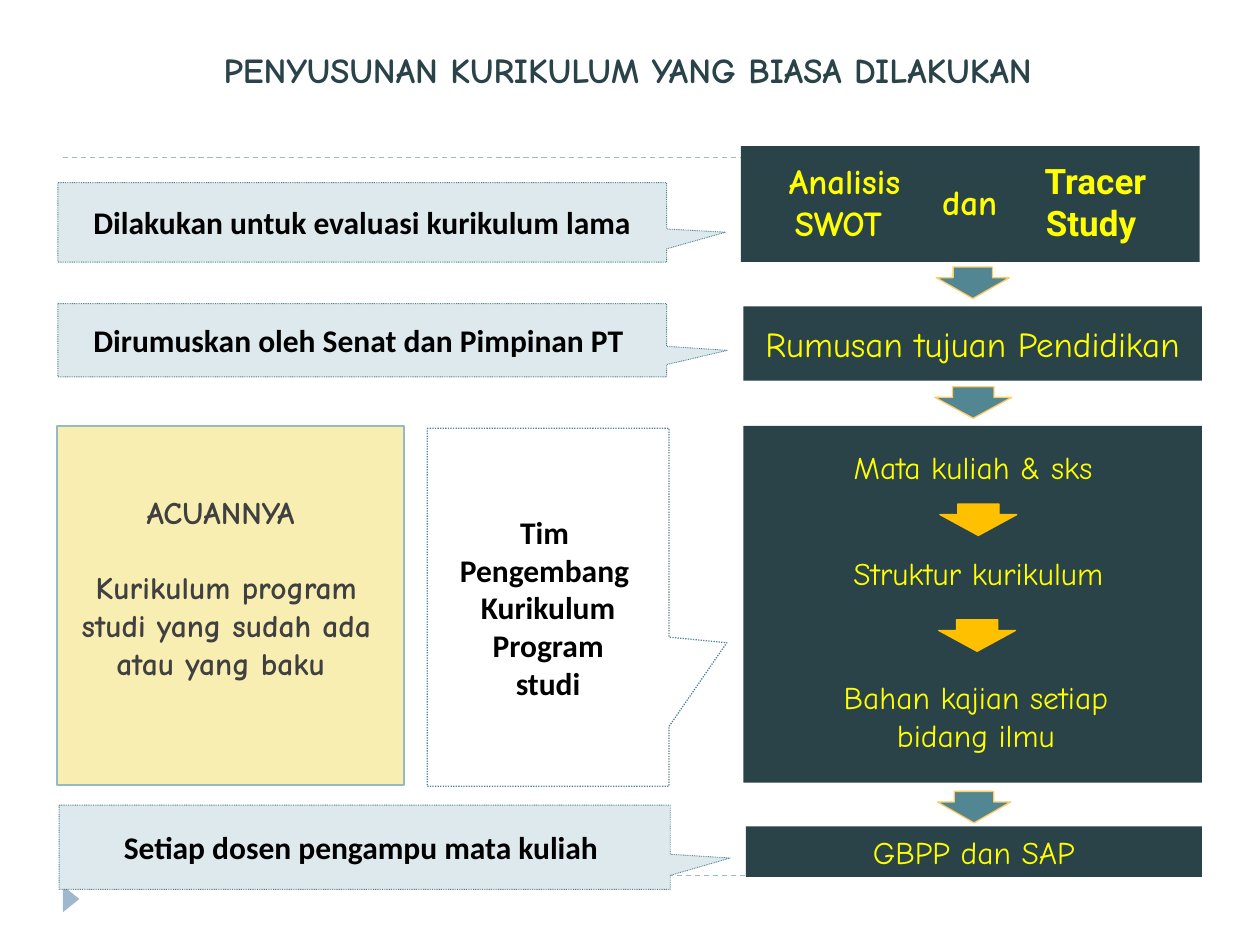
from lxml.etree import SubElement
from pptx import Presentation
from pptx.dml.color import RGBColor
from pptx.enum.dml import MSO_LINE
from pptx.enum.shapes import MSO_CONNECTOR, MSO_SHAPE
from pptx.enum.text import MSO_ANCHOR, PP_ALIGN
from pptx.oxml.ns import qn
from pptx.util import Pt

DARK, TEAL, PALE = "294349", "528693", "DDE9EC"
YELLOW, GOLD, AMBER, BLUE = "FFFF00", "FFCC66", "FFC000", "9FB8CD"
COMIC, CALIBRI, ROBOTO = "Comic Neue", "Calibri", "Roboto"


def color(value):
    return RGBColor.from_string(value)


class Board:
    """The current slide and its style; every length is in points."""

    def __init__(self, page):
        self.page = page

    def label(self, box, lines, size=18, font=COMIC, ink=YELLOW, bold=False,
              anchor=MSO_ANCHOR.TOP, wrap=True, gap=0):
        frame = box.text_frame
        frame.word_wrap, frame.vertical_anchor = wrap, anchor
        for index, line in enumerate(lines):
            para = frame.add_paragraph() if index else frame.paragraphs[0]
            para.alignment = PP_ALIGN.CENTER
            para.space_before = Pt(gap if index else 0)
            span = para.add_run()
            span.text = line
            values = {"size": Pt(size), "name": font, "bold": bold}
            for name, value in values.items():
                setattr(span.font, name, value)
            span.font.color.rgb = color(ink)

    def title(self, place, text, **style):
        box = self.page.shapes.title
        for name, value in zip(("left", "top", "width", "height"), place):
            setattr(box, name, Pt(value))
        self.label(box, [text], anchor=MSO_ANCHOR.MIDDLE, **style)

    def text(self, place, *lines, **style):
        self.label(self.page.shapes.add_textbox(*map(Pt, place)), lines, **style)

    def shape(self, kind, place, fill=None, line=None, weight=0.75, dash=None,
              adjust=()):
        box = self.page.shapes.add_shape(kind, *map(Pt, place))
        box.shadow.inherit = False
        if fill:
            box.fill.solid()
            box.fill.fore_color.rgb = color(fill)
        else:
            box.fill.background()
        if line:
            box.line.color.rgb = color(line)
            box.line.width = Pt(weight)
            box.line.dash_style = dash
        else:
            box.line.fill.background()
        for index, value in enumerate(adjust):
            box.adjustments[index] = value
        return box

    def panel(self, place, *lines, **style):
        box = self.shape(MSO_SHAPE.RECTANGLE, place, DARK)
        if lines:
            self.label(box, lines, **style)

    def callout(self, place, tip, *lines, fill=PALE, weight=0.5):
        box = self.shape(MSO_SHAPE.RECTANGULAR_CALLOUT, place, fill, TEAL, weight,
                         MSO_LINE.ROUND_DOT, tip)
        self.label(box, lines, font=CALIBRI, ink="000000", bold=True,
                   anchor=MSO_ANCHOR.MIDDLE)

    def arrow(self, left, top, width=41.8, fill=TEAL, line=GOLD):
        self.shape(MSO_SHAPE.DOWN_ARROW, (left, top, width, 18), fill, line,
                   adjust=(0.538, 0.662))

    def rule(self, top):
        line = self.page.shapes.add_connector(
            MSO_CONNECTOR.STRAIGHT, Pt(36), Pt(top), Pt(684), Pt(top))
        line.line.color.rgb = color(BLUE)
        line.line.width = Pt(0.75)
        line.line.dash_style = MSO_LINE.DASH
        SubElement(line.element.spPr, qn("a:effectLst"))


def main():
    deck = Presentation()
    deck.slide_width, deck.slide_height = Pt(720), Pt(540)
    board = Board(deck.slides.add_slide(deck.slide_layouts[5]))

    # Background rules and corner marker
    for top in (500.4, 90):
        board.rule(top)
    marker = board.shape(MSO_SHAPE.ISOSCELES_TRIANGLE, (33.1, 509, 15.1, 9.4), BLUE)
    marker.rotation = 90

    board.title((22.3, 23.8, 673.2, 31.7), "PENYUSUNAN KURIKULUM YANG BIASA DILAKUKAN",
                size=20, ink=DARK, bold=True)

    # Reference box
    board.shape(MSO_SHAPE.RECTANGLE, (32.4, 243.4, 198.7, 205.2), "F8EEB2", "94BAC3", 1)
    board.text((38.2, 277.9, 182.2, 138.2), "ACUANNYA ",
               "Kurikulum program studi yang sudah ada atau yang baku ",
               ink="404040", bold=True, gap=21.8)

    # Who does each step
    board.callout((33.1, 104.4, 347.8, 45.4), (0.597, 0.124),
                  "Dilakukan untuk evaluasi kurikulum lama")
    board.callout((33.1, 173.5, 347.8, 41.8), (0.6, 0.139),
                  "Dirumuskan oleh Senat dan Pimpinan PT ")
    board.callout((244.1, 244.8, 138.2, 204.5), (0.739, 0.099), "Tim ", "Pengembang ",
                  "Kurikulum", "Program", "studi", fill=None, weight=0.75)
    board.callout((33.8, 460.1, 349.2, 48.2), (0.598, 0.128),
                  "Setiap dosen pengampu mata kuliah ")

    # Step 1: analysis
    board.panel((423.4, 83.5, 262.1, 66.2))
    for place, words, font in (
            ((429.8, 87.8, 105.8, 56.2), "Analisis SWOT ", COMIC),
            ((525.6, 99.4, 64.1, 31.7), "dan ", COMIC),
            ((573.1, 87.8, 105.8, 56.2), "Tracer Study ", ROBOTO)):
        board.text(place, words, size=20, font=font, bold=True)

    # Step 2: aims
    board.panel((424.8, 175, 262.1, 42.5), "Rumusan tujuan Pendidikan", size=20,
                anchor=MSO_ANCHOR.MIDDLE, wrap=False)

    # Step 3: courses, structure and study material
    board.panel((424.8, 243.4, 262.1, 203.8))
    board.text((456.5, 252.7, 205.2, 28.8), "Mata kuliah & sks ")
    board.text((450.7, 300.2, 216.7, 54), "Struktur kurikulum",
               anchor=MSO_ANCHOR.MIDDLE, wrap=False)
    board.text((457.2, 383.8, 200.9, 51.1), "Bahan kajian setiap bidang ilmu")
    for left, top in ((537.1, 288), (536.4, 354.2)):
        board.arrow(left, top, 43.9, AMBER, AMBER)

    # Step 4: teaching plans
    board.panel((426.2, 472.3, 260.6, 28.8), "GBPP dan SAP")

    # Arrows between the steps
    for left, top, width in ((535, 152.6, 41.8), (534.2, 221, 43.9), (535.7, 452.2, 41.8)):
        board.arrow(left, top, width)

    deck.save("out.pptx")


if __name__ == "__main__":
    main()
